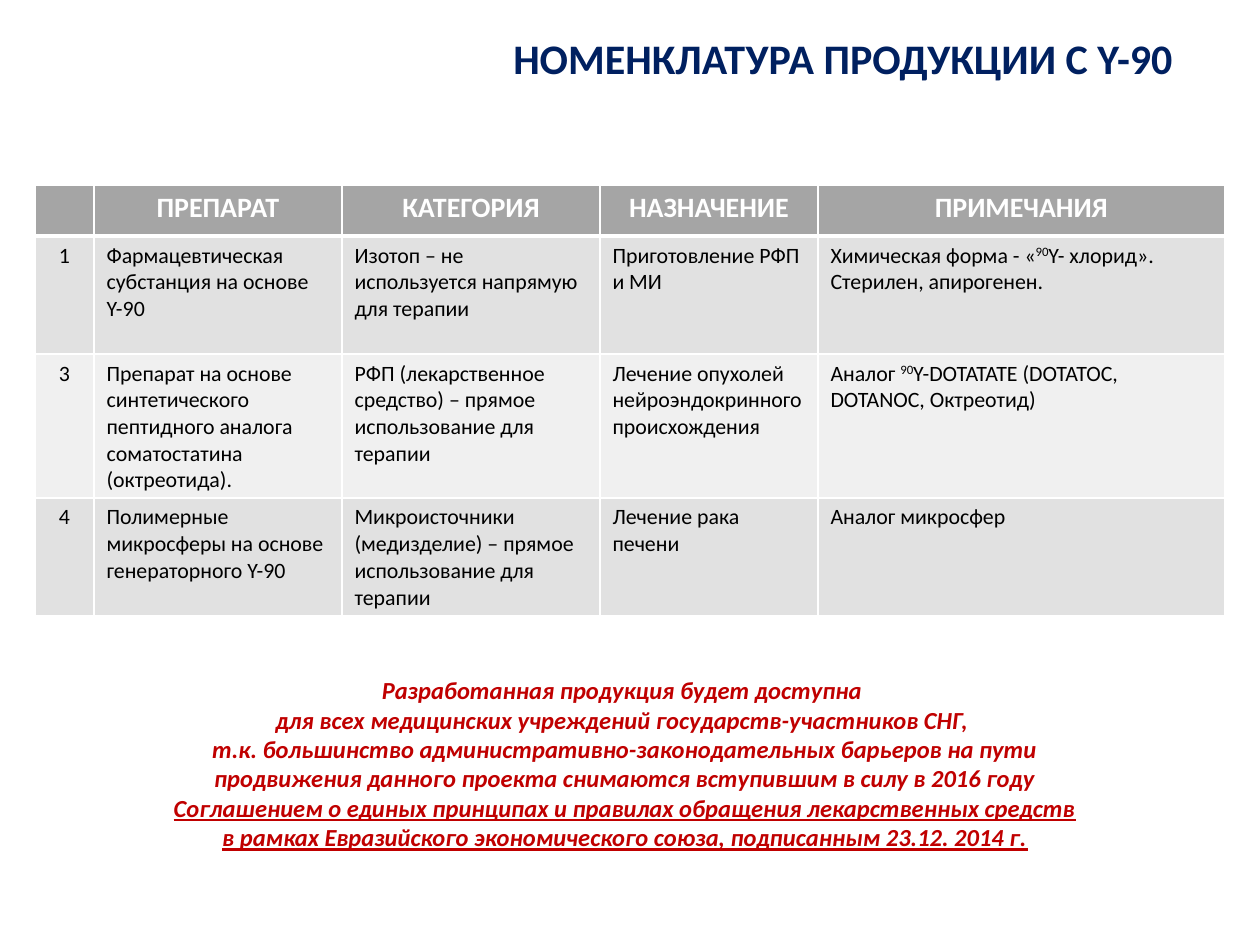
import pptx
import pptx.dml.color
import pptx.enum.text
import pptx.oxml
import pptx.oxml.ns
import pptx.util

EMU_PER_PX = 914400 / 126
CENTER = pptx.enum.text.PP_ALIGN.CENTER


def px(*lengths):
    return [pptx.util.Emu(round(length * EMU_PER_PX)) for length in lengths]


def add_run(paragraph, text, size, color, bold=False, italic=False, underline=False):
    run = paragraph.add_run()
    run.text = text
    font = run.font
    font.name = "Calibri"
    font.size = pptx.util.Pt(size)
    font.color.rgb = pptx.dml.color.RGBColor.from_string(color)
    font.bold = bold
    font.italic = italic
    font.underline = underline
    return run


deck = pptx.Presentation()
deck.slide_width, deck.slide_height = px(1260, 945)
slide = deck.slides.add_slide(deck.slide_layouts[6])

heading = slide.shapes.add_textbox(*px(25, 26, 1160, 79)).text_frame
heading.word_wrap = True
heading.paragraphs[0].alignment = pptx.enum.text.PP_ALIGN.RIGHT
heading.paragraphs[0].space_after = pptx.util.Pt(6)
add_run(heading.paragraphs[0], "НОМЕНКЛАТУРА ПРОДУКЦИИ С Y-90", 24, "002060", bold=True)

products = [
    ["", "ПРЕПАРАТ", "КАТЕГОРИЯ", "НАЗНАЧЕНИЕ", "ПРИМЕЧАНИЯ"],
    ["1", "Фармацевтическая субстанция на основе Y-90",
     "Изотоп – не используется напрямую для терапии",
     "Приготовление РФП и МИ",
     "Химическая форма - «^90^Y- хлорид».\nСтерилен, апирогенен."],
    ["3", "Препарат на основе синтетического пептидного аналога соматостатина (октреотида).",
     "РФП (лекарственное средство) – прямое использование для терапии",
     "Лечение опухолей нейроэндокринного происхождения",
     "Аналог ^90^Y-DOTATATE (DOTATOC, DOTANOC, Октреотид)"],
    ["4", "Полимерные микросферы на основе генераторного Y-90",
     "Микроисточники (медизделие) – прямое использование для терапии",
     "Лечение рака печени",
     "Аналог микросфер"],
]
column_widths = px(59, 248, 258, 218, 407)
row_heights = px(51, 118, 144, 117)
row_fills = ["A5A5A5", "E1E1E1", "F0F0F0", "E1E1E1"]

nomenclature = slide.shapes.add_table(4, 5, *px(35, 185, 1190, 430)).table
for column, width in zip(nomenclature.columns, column_widths):
    column.width = width
for row, height in zip(nomenclature.rows, row_heights):
    row.height = height

for r, entries in enumerate(products):
    is_header = r == 0
    size, color = (16, "FFFFFF") if is_header else (12.5, "000000")
    for c, entry in enumerate(entries):
        cell = nomenclature.cell(r, c)
        properties = cell._tc.get_or_add_tcPr()
        for side in "LRTB":
            thick = (is_header and side == "B") or (r == 1 and side == "T")
            properties.append(pptx.oxml.parse_xml(
                f'<a:ln{side} {pptx.oxml.ns.nsdecls("a")} w="{pptx.util.Pt(3 if thick else 1)}">'
                f'<a:solidFill><a:srgbClr val="FFFFFF"/></a:solidFill></a:ln{side}>'))
        cell.fill.solid()
        cell.fill.fore_color.rgb = pptx.dml.color.RGBColor.from_string(row_fills[r])
        for i, line in enumerate(entry.split("\n") if entry else []):
            paragraph = cell.text_frame.add_paragraph() if i else cell.text_frame.paragraphs[0]
            if is_header or c == 0:
                paragraph.alignment = CENTER
            for part, text in enumerate(line.split("^")):
                run = add_run(paragraph, text, size, color, bold=is_header)
                if part % 2:
                    run._r.get_or_add_rPr().set("baseline", "30000")

availability = [
    [("Разработанная продукция будет доступна ", False)],
    [("для всех медицинских учреждений государств-участников СНГ, ", False)],
    [("т.к. большинство административно-законодательных барьеров на пути продвижения "
      "данного проекта снимаются вступившим в силу в 2016 году ", False),
     ("Соглашением о единых принципах и правилах обращения лекарственных средств "
      "в рамках Евразийского экономического союза, подписанным 23.12. 2014 г.", True)],
]
conclusion = slide.shapes.add_textbox(*px(154, 669, 942, 190)).text_frame
conclusion.word_wrap = True
for i, parts in enumerate(availability):
    paragraph = conclusion.add_paragraph() if i else conclusion.paragraphs[0]
    paragraph.alignment = CENTER
    for text, underlined in parts:
        add_run(paragraph, text, 14, "C00000", bold=True, italic=True, underline=underlined)

deck.save("out.pptx")
